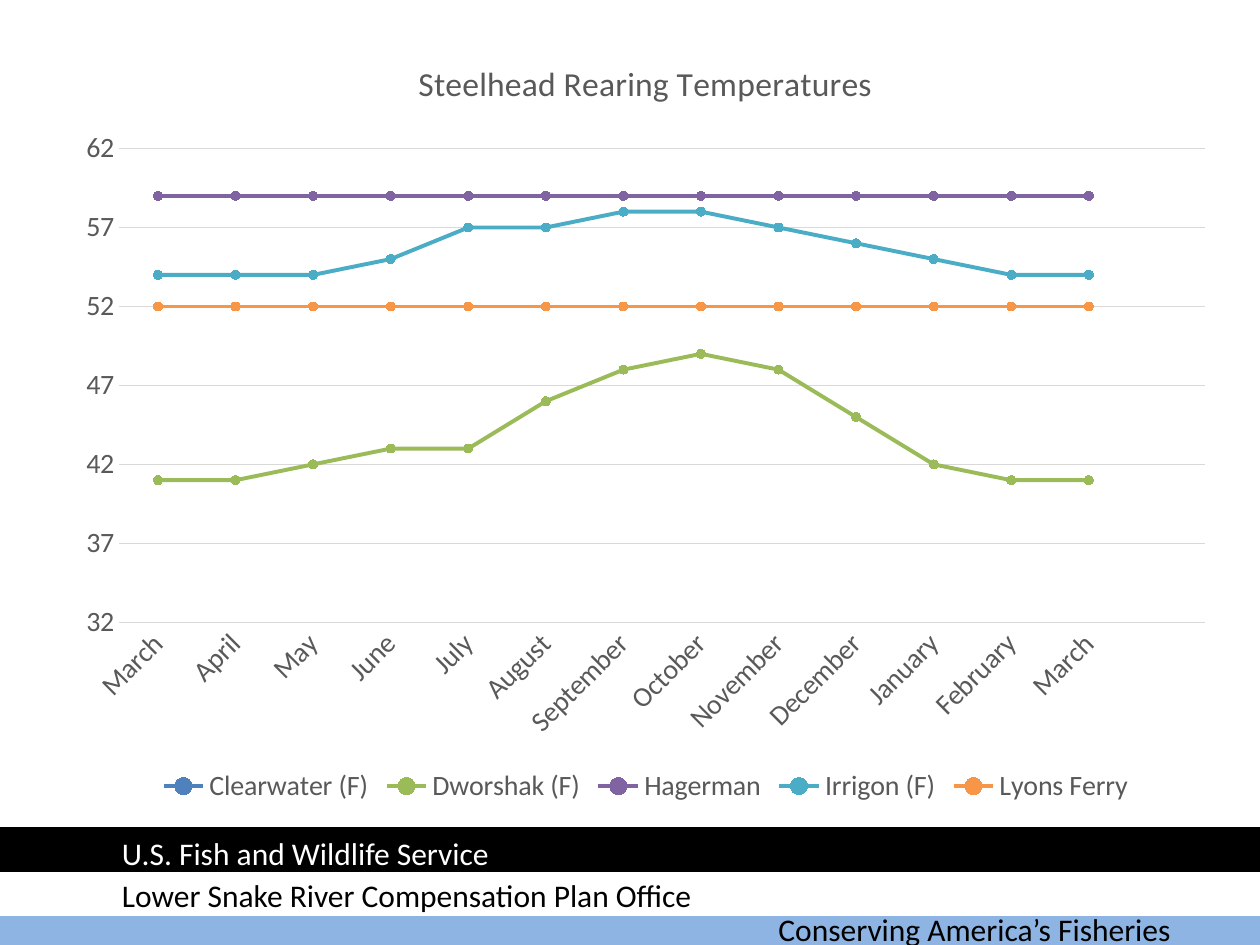
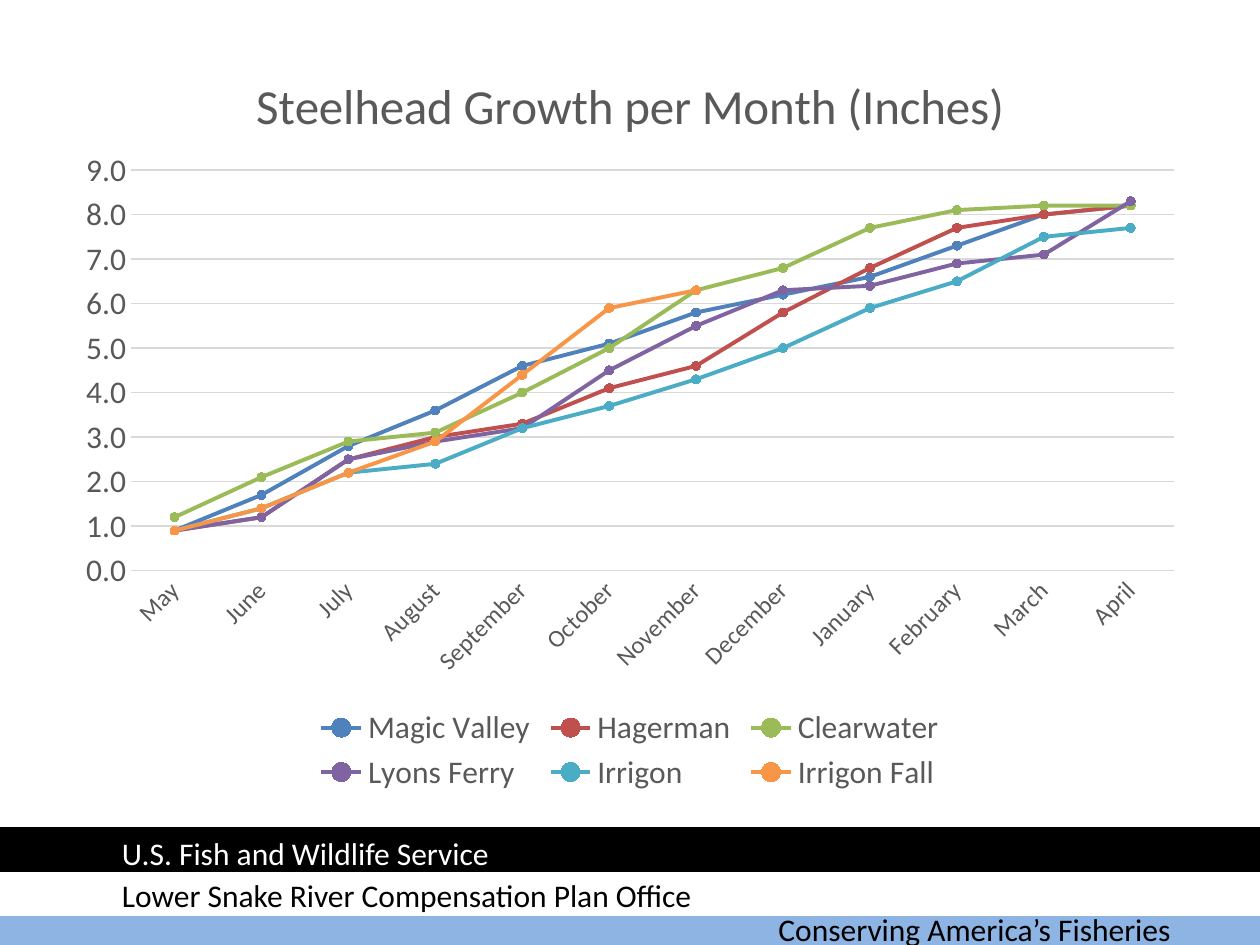
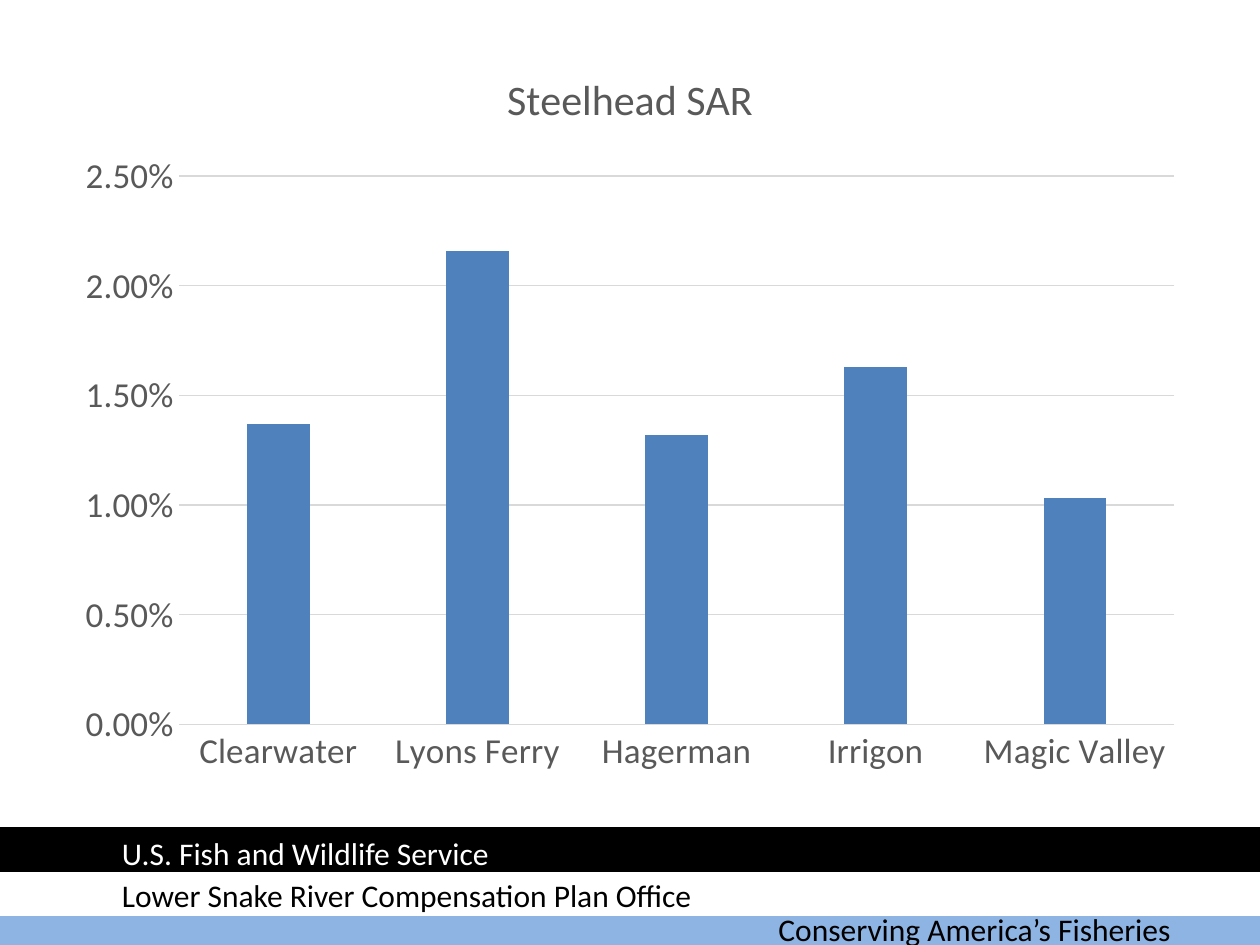
import pptx
import pptx.util
import pptx.chart.data
import pptx.dml.color
import pptx.enum.chart
import pptx.enum.shapes
import pptx.enum.text
import pptx.oxml

HUES = {
    "black": "000000", "white": "FFFFFF", "sky": "8EB4E3",
    "grey": "595959", "grid": "D9D9D9",
    "blue": "4F81BD", "red": "C0504D", "green": "9BBB59",
    "plum": "8064A2", "teal": "4BACC6", "gold": "F79646",
}
FONT = "Calibri"
SCALE = 9144
MONTHS = ["January", "February", "March", "April", "May", "June", "July",
          "August", "September", "October", "November", "December"]
KINDS = pptx.enum.chart.XL_CHART_TYPE


class Deck:
    def __init__(self):
        self.show = pptx.Presentation()
        self.show.slide_width, self.show.slide_height = self.px(1000, 750)
        self.slide = None

    def px(self, *sizes):
        return [pptx.util.Emu(size * SCALE) for size in sizes]

    def hue(self, name):
        return pptx.dml.color.RGBColor.from_string(HUES[name])

    def style(self, font, size, hue):
        font.name = FONT
        font.size = pptx.util.Pt(size)
        font.bold = False
        font.color.rgb = self.hue(hue)

    def fill(self, form, hue):
        form.fill.solid()
        form.fill.fore_color.rgb = self.hue(hue)

    def line(self, form, hue, width):
        form.line.color.rgb = self.hue(hue)
        form.line.width = pptx.util.Pt(width)

    def band(self, left, top, hue):
        shape = self.slide.shapes.add_shape(
            pptx.enum.shapes.MSO_SHAPE.RECTANGLE, *self.px(left, top, 1000, 33))
        shape.shadow.inherit = False
        self.fill(shape, hue)
        self.line(shape, hue, 2)

    def text(self, left, top, width, words, hue):
        box = self.slide.shapes.add_textbox(*self.px(left, top, width, 40))
        frame = box.text_frame
        frame.word_wrap = True
        frame.auto_size = pptx.enum.text.MSO_AUTO_SIZE.SHAPE_TO_FIT_TEXT
        run = frame.paragraphs[0].add_run()
        run.text = words
        self.style(run.font, 18, hue)

    def page(self):
        self.slide = self.show.slides.add_slide(self.show.slide_layouts[6])
        self.band(-1, 717, "sky")
        self.band(0, 693, "white")
        self.band(0, 658, "black")
        self.text(608, 717, 367, "Conserving America’s Fisheries", "black")
        self.text(87, 657, 416, "U.S. Fish and Wildlife Service", "white")
        self.text(87, 690, 497, "Lower Snake River Compensation Plan Office", "black")

    def back(self):
        return pptx.oxml.parse_xml(
            '<c:spPr xmlns:c="http://schemas.openxmlformats.org/drawingml/2006/chart"'
            ' xmlns:a="http://schemas.openxmlformats.org/drawingml/2006/main">'
            f'<a:solidFill><a:srgbClr val="{HUES["white"]}"/></a:solidFill>'
            '<a:ln><a:noFill/></a:ln></c:spPr>')

    def plan(self, chart, left, top, width, height):
        area = chart.element.xpath(".//c:plotArea")[0]
        for old in area.xpath("c:layout"):
            area.remove(old)
        area.insert(0, pptx.oxml.parse_xml(
            '<c:layout xmlns:c="http://schemas.openxmlformats.org/drawingml/2006/chart">'
            '<c:manualLayout><c:layoutTarget val="inner"/>'
            '<c:xMode val="edge"/><c:yMode val="edge"/>'
            f'<c:x val="{left}"/><c:y val="{top}"/>'
            f'<c:w val="{width}"/><c:h val="{height}"/>'
            '</c:manualLayout></c:layout>'))

    def chart(self, kind, spot, title, head, cats, rows, sizes, code):
        data = pptx.chart.data.CategoryChartData(number_format=code)
        data.categories = cats
        for name, hue, vals in rows:
            data.add_series(name, vals)
        chart = self.slide.shapes.add_chart(kind, *self.px(*spot), data).chart
        base, across, up = sizes
        self.style(chart.font, base, "black")
        chart.element.xpath("c:txPr")[0].addprevious(self.back())
        chart.has_title = True
        run = chart.chart_title.text_frame.paragraphs[0].add_run()
        run.text = title
        self.style(run.font, head, "grey")
        chart.chart_title.include_in_layout = False
        for axis, size in ((chart.category_axis, across), (chart.value_axis, up)):
            axis.major_tick_mark = pptx.enum.chart.XL_TICK_MARK.NONE
            axis.minor_tick_mark = pptx.enum.chart.XL_TICK_MARK.NONE
            self.style(axis.tick_labels.font, size, "grey")
        self.line(chart.category_axis.format, "grid", 0.75)
        chart.value_axis.format.line.fill.background()
        chart.value_axis.has_major_gridlines = True
        self.line(chart.value_axis.major_gridlines.format, "grid", 0.75)
        chart.value_axis.tick_labels.number_format = code
        chart.value_axis.tick_labels.number_format_is_linked = False
        chart.plots[0].vary_by_categories = False
        chart.has_legend = False
        return chart

    def lines(self, spot, title, head, cats, rows, sizes, code):
        chart = self.chart(KINDS.LINE_MARKERS, spot, title, head, cats, rows, sizes, code)
        for body in chart.element.xpath(".//c:catAx/c:txPr/a:bodyPr"):
            body.set("rot", "-2700000")
        for series, (name, hue, vals) in zip(chart.plots[0].series, rows):
            series.smooth = False
            self.line(series.format, hue, 2.25)
            series.marker.style = pptx.enum.chart.XL_MARKER_STYLE.CIRCLE
            series.marker.size = 5
            self.fill(series.marker.format, hue)
            self.line(series.marker.format, hue, 0.75)
        chart.has_legend = True
        chart.legend.position = pptx.enum.chart.XL_LEGEND_POSITION.BOTTOM
        chart.legend.include_in_layout = False
        self.style(chart.legend.font, sizes[2], "grey")
        return chart

    def bars(self, spot, title, head, cats, rows, sizes, code):
        chart = self.chart(KINDS.COLUMN_CLUSTERED, spot, title, head, cats, rows, sizes, code)
        plot = chart.plots[0]
        plot.gap_width = 219
        plot.overlap = -27
        for series, (name, hue, vals) in zip(plot.series, rows):
            self.fill(series.format, hue)
        chart.element.xpath(".//c:plotArea")[0].append(self.back())
        return chart


def heat(deck):
    deck.page()
    rows = [
        ("Clearwater (F)", "blue", [None] * 13),
        ("Dworshak (F)", "green", [41, 41, 42, 43, 43, 46, 48, 49, 48, 45, 42, 41, 41, None]),
        ("Hagerman", "plum", [59] * 13),
        ("Irrigon (F)", "teal", [54, 54, 54, 55, 57, 57, 58, 58, 57, 56, 55, 54, 54, None]),
        ("Lyons Ferry", "gold", [52] * 13),
    ]
    chart = deck.lines((50, 25, 925, 617), "Steelhead Rearing Temperatures", 19.2,
                       MONTHS[2:] + MONTHS[:3], rows, (16, 16, 16), "General")
    axis = chart.value_axis
    axis.minimum_scale, axis.maximum_scale, axis.major_unit = 32, 62, 5


def growth(deck):
    deck.page()
    rows = [
        ("Magic Valley", "blue", [0.9, 1.7, 2.8, 3.6, 4.6, 5.1, 5.8, 6.2, 6.6, 7.3, 8, 8.2]),
        ("Hagerman", "red", [0.9, 1.2, 2.5, 3, 3.3, 4.1, 4.6, 5.8, 6.8, 7.7, 8, 8.2]),
        ("Clearwater", "green", [1.2, 2.1, 2.9, 3.1, 4, 5, 6.3, 6.8, 7.7, 8.1, 8.2, 8.2]),
        ("Lyons Ferry", "plum", [0.9, 1.2, 2.5, 2.9, 3.2, 4.5, 5.5, 6.3, 6.4, 6.9, 7.1, 8.3]),
        ("Irrigon", "teal", [0.9, 1.4, 2.2, 2.4, 3.2, 3.7, 4.3, 5, 5.9, 6.5, 7.5, 7.7]),
        ("Irrigon Fall", "gold", [0.9, 1.4, 2.2, 2.9, 4.4, 5.9, 6.3] + [None] * 5),
    ]
    chart = deck.lines((50, 33, 900, 600), "Steelhead Growth per Month (Inches)", 28,
                       MONTHS[4:] + MONTHS[:4], rows, (10, 14, 18), "0.0")
    deck.plan(chart, 0.06, 0.17, 0.92, 0.53)


def rates(deck):
    deck.page()
    cats = ["Clearwater", "Lyons Ferry", "Hagerman", "Irrigon", "Magic Valley"]
    rows = [("Series 1", "blue", [0.0137, 0.0216, 0.0132, 0.0163, 0.0103])]
    deck.bars((50, 33, 900, 592), "Steelhead SAR", 24, cats, rows, (20, 20, 20), "0.00%")


def main():
    deck = Deck()
    heat(deck)
    growth(deck)
    rates(deck)
    deck.show.save("out.pptx")


if __name__ == "__main__":
    main()
